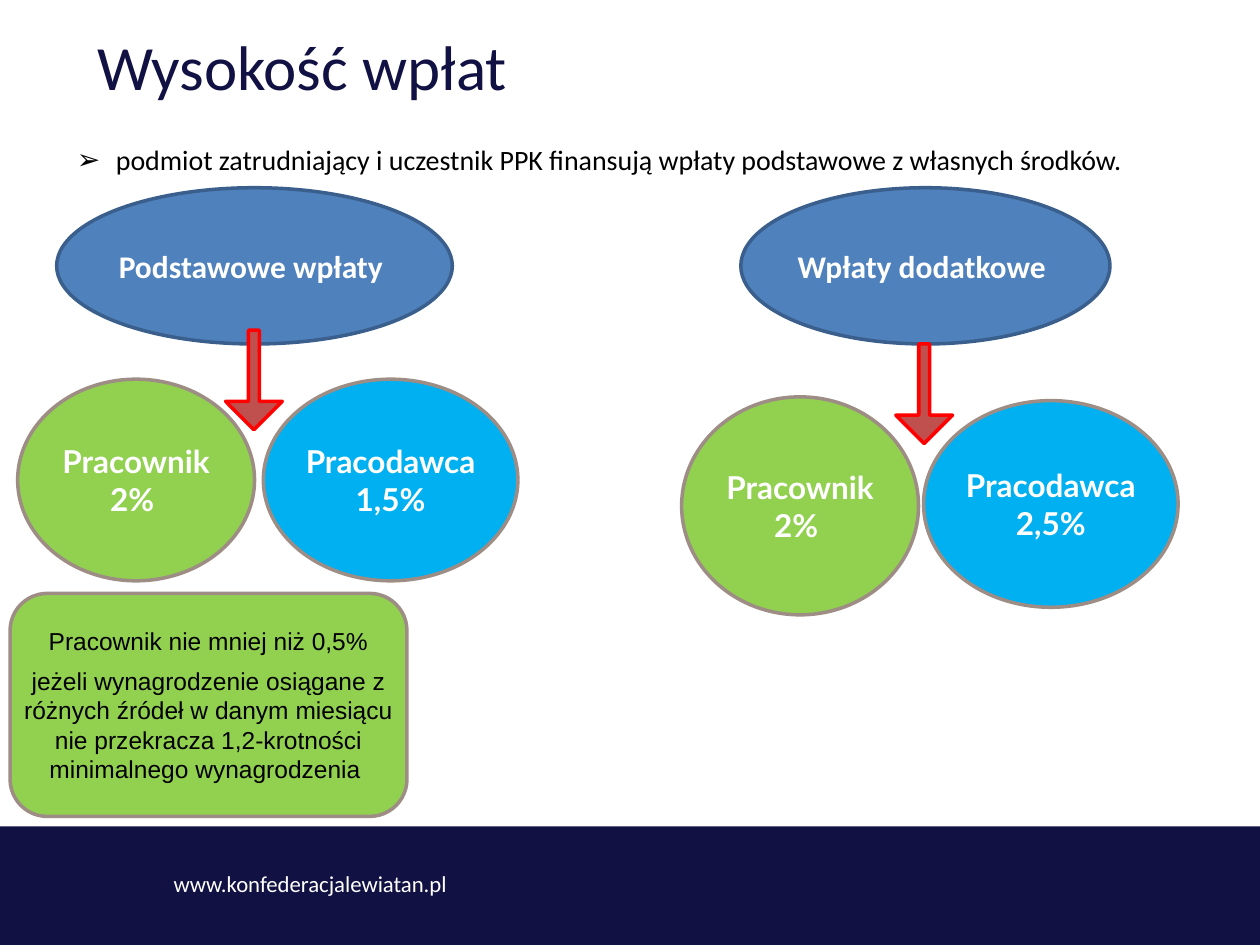
from lxml import etree
from pptx import Presentation
from pptx.dml.color import RGBColor
from pptx.enum.shapes import MSO_SHAPE as Kind
from pptx.enum.text import MSO_ANCHOR as Anchor, MSO_AUTO_SIZE as Fit, PP_ALIGN as Align
from pptx.oxml.ns import qn
from pptx.util import Inches, Pt

HUES = {
    "navy": "111143", "white": "FFFFFF", "black": "000000",
    "blue": "4F81BD", "steel": "3A5F8C", "green": "92D050",
    "sky": "00B0F0", "taupe": "9D8D85", "brick": "C0504D", "red": "FF0000",
}


def hue(name):
    return RGBColor.from_string(HUES[name])


def write(para, text, size, color, face="Calibri", bold=False):
    run = para.add_run()
    run.text = text
    font = run.font
    font.name, font.size, font.bold = face, Pt(size), bold
    font.color.rgb = hue(color)


def place(item, box):
    item.left, item.top, item.width, item.height = map(Inches, box)


def add_form(slide, kind, box, fill, edge=None):
    form = slide.shapes.add_shape(kind, *map(Inches, box))
    form.shadow.inherit = False
    form.fill.solid()
    form.fill.fore_color.rgb = hue(fill)
    if edge:
        form.line.color.rgb = hue(edge)
        form.line.width = Pt(2)
    else:
        form.line.fill.background()
    return form


def label(form, lines, **style):
    """Centre the lines in the form, with no insets."""
    frame = form.text_frame
    frame.word_wrap = True
    frame.vertical_anchor = Anchor.MIDDLE
    frame.margin_left = frame.margin_right = 0
    frame.margin_top = frame.margin_bottom = 0
    for i, line in enumerate(lines):
        para = frame.add_paragraph() if i else frame.paragraphs[0]
        para.alignment = Align.CENTER
        para.space_after = Pt(6)
        write(para, line, **style)


def add_oval(slide, box, text, fill, edge="taupe", face="Lato"):
    oval = add_form(slide, Kind.OVAL, box, fill, edge)
    label(oval, [text], size=18, color="white", face=face, bold=True)


def add_arrow(slide, left, top):
    arrow = add_form(slide, Kind.DOWN_ARROW, (left, top, 0.45, 0.79), "brick", "red")
    arrow.adjustments[0] = 0.19
    arrow.adjustments[1] = 0.5


def add_group(slide, head, arrow, staff, firm):
    """Draw a heading oval, its arrow and the two shares below."""
    text, box = head
    add_oval(slide, box, text, "blue", "steel", "Calibri")
    add_arrow(slide, *arrow)
    for (text, box), fill in ((staff, "green"), (firm, "sky")):
        add_oval(slide, box, text, fill)


def fill_holder(holder, box):
    """Move a placeholder and return its first paragraph, set flush left at the top."""
    place(holder, box)
    frame = holder.text_frame
    frame.word_wrap = True
    frame.auto_size = Fit.NONE
    frame.vertical_anchor = Anchor.TOP
    para = frame.paragraphs[0]
    para.alignment = Align.LEFT
    para.space_before = Pt(0)
    return para


def add_bullet(para, mark, indent):
    props = para._p.get_or_add_pPr()
    props.set("marL", str(Inches(indent)))
    props.set("indent", str(-Inches(indent)))
    etree.SubElement(props, qn("a:buChar")).set("char", mark)


def add_footer(slide):
    add_form(slide, Kind.RECTANGLE, (0, 6.56, 10, 0.94), "navy")
    box = slide.shapes.add_textbox(*map(Inches, (1.28, 6.85, 3.31, 0.54)))
    box.text_frame.word_wrap = True
    write(box.text_frame.paragraphs[0], "www.konfederacjalewiatan.pl", 13, "white")


def add_note(slide):
    note = add_form(slide, Kind.ROUNDED_RECTANGLE, (0.08, 4.71, 3.15, 1.77), "green", "taupe")
    label(note, [
        "Pracownik nie mniej niż 0,5%",
        "jeżeli wynagrodzenie osiągane z różnych źródeł w danym miesiącu "
        "nie przekracza 1,2‑krotności minimalnego wynagrodzenia ",
    ], size=14, color="black", face="Arial")


def main():
    deck = Presentation()
    deck.slide_width, deck.slide_height = Inches(10), Inches(7.5)
    slide = deck.slides.add_slide(deck.slide_layouts[1])
    add_footer(slide)

    title = fill_holder(slide.shapes.title, (0.67, 0.17, 9.11, 0.86))
    write(title, "Wysokość wpłat", 36, "navy")
    item = fill_holder(slide.placeholders[1], (0.51, 0.95, 9.49, 4.46))
    item.line_spacing = 1.5
    add_bullet(item, "➢", 0.31)
    write(item, "podmiot zatrudniający i uczestnik PPK finansują wpłaty "
          "podstawowe z własnych środków.", 16, "black")

    add_group(slide, ("Podstawowe wpłaty ", (0.45, 1.49, 3.14, 1.24)), (1.79, 2.62),
              ("Pracownik 2% ", (0.14, 3.01, 1.88, 1.6)),
              ("Pracodawca 1,5%", (2.09, 3.01, 2.02, 1.6)))
    add_note(slide)
    add_group(slide, ("Wpłaty dodatkowe ", (5.88, 1.49, 2.93, 1.24)), (7.11, 2.73),
              ("Pracownik 2% ", (5.41, 3.15, 1.88, 1.73)),
              ("Pracodawca 2,5%", (7.33, 3.18, 2.02, 1.64)))
    deck.save("out.pptx")


if __name__ == "__main__":
    main()
